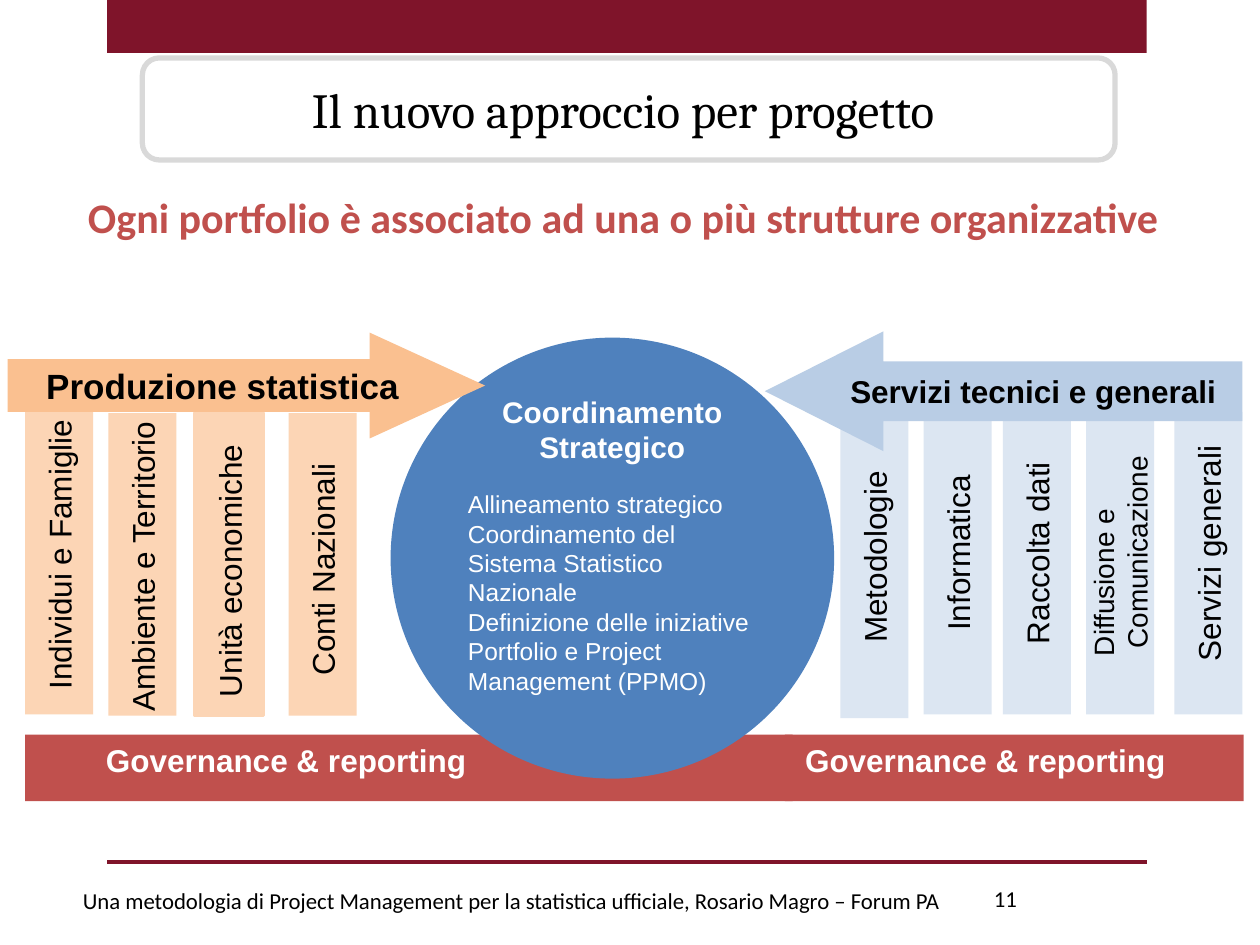
"""Build the slide on the project-based approach and its organisational portfolios."""
from lxml import etree
from pptx import Presentation
from pptx.dml.color import RGBColor
from pptx.enum.shapes import MSO_CONNECTOR, MSO_SHAPE
from pptx.enum.text import MSO_ANCHOR, PP_ALIGN
from pptx.oxml.ns import qn
from pptx.util import Inches, Pt

RECT, ROUND, OVAL = MSO_SHAPE.RECTANGLE, MSO_SHAPE.ROUNDED_RECTANGLE, MSO_SHAPE.OVAL
RIGHT, LEFT = MSO_SHAPE.RIGHT_ARROW, MSO_SHAPE.LEFT_ARROW
STRAIGHT = MSO_CONNECTOR.STRAIGHT
TOP, MIDDLE = MSO_ANCHOR.TOP, MSO_ANCHOR.MIDDLE
START, CENTER = PP_ALIGN.LEFT, PP_ALIGN.CENTER

WINE, RED, BLUE = "7F142A", "C0504D", "4F81BD"
PEACH, PALE, BLACK, WHITE = "FCD5B5", "DCE6F2", "000000", "FFFFFF"

deck = Presentation()
deck.slide_width, deck.slide_height = Inches(10), Inches(7.5)
slide = deck.slides.add_slide(deck.slide_layouts[6])


def block(kind, box, fill, line=None, width=2):
    """Add a preset shape, or a text box when kind is None."""
    spot = [Inches(v) for v in box]
    if kind is None:
        return slide.shapes.add_textbox(*spot)
    shape = slide.shapes.add_shape(kind, *spot)
    shape.shadow.inherit = False
    shape.fill.solid()
    shape.fill.fore_color.rgb = RGBColor.from_string(fill)
    if line:
        shape.line.color.rgb = RGBColor.from_string(line)
        shape.line.width = Pt(width)
    else:
        shape.line.fill.background()
    return shape


def write(shape, lines, size, color=BLACK, bold=False, face="Arial",
          align=START, anchor=TOP, wrap=True):
    """Fill a shape with paragraphs in one style."""
    frame = shape.text_frame
    frame.word_wrap, frame.vertical_anchor = wrap, anchor
    frame.text = "\n".join(lines)
    for para in frame.paragraphs:
        para.alignment = align
        font = para.font
        font.size, font.bold, font.name = Pt(size), bold, face
        font.color.rgb = RGBColor.from_string(color)
    return frame


block(RECT, (0.85, 0, 8.25, 0.42), WINE)
rule = slide.shapes.add_connector(
    STRAIGHT, Inches(0.85), Inches(6.84), Inches(9.1), Inches(6.84))
rule.line.color.rgb = RGBColor.from_string(WINE)
rule.line.width = Pt(2)
etree.SubElement(rule._element.spPr, qn("a:effectLst"))

title = block(ROUND, (1.13, 0.46, 7.72, 0.81), WHITE, "D9D9D9", 3)
frame = write(title, ["Il nuovo approccio per progetto"], 28, face="Cambria",
              align=CENTER, anchor=MIDDLE)
frame.margin_right = Inches(0.19)
write(block(None, (0.6, 1.47, 8.93, 0.5), None),
      ["Ogni portfolio è associato ad una o più strutture organizzative"],
      24, RED, True, "Calibri")

for left, width, inset in [(0.2, 6.09, 0.64), (6.23, 3.64, 0.16)]:
    bar = block(RECT, (left, 5.83, width, 0.53), RED)
    frame = write(bar, ["Governance & reporting"], 18, WHITE, True)
    frame.margin_left = Inches(inset)

columns = [
    (0.2, 3.19, 2.48, PEACH, None, ["Individui e Famiglie"], 4.39, 2.36),
    (0.86, 3.28, 2.4, PEACH, None, ["Ambiente e Territorio"], 4.48, 2.53),
    (1.55, 3.28, 2.4, PEACH, PEACH, ["Unità economiche"], 4.52, 2.22),
    (2.29, 3.28, 2.4, PEACH, None, ["Conti Nazionali"], 4.51, 1.9),
    (6.67, 3.3, 2.4, PALE, None, ["Metodologie"], 4.41, 1.58),
    (7.33, 3.27, 2.4, PALE, None, ["Informatica"], 4.38, 1.45),
    (7.96, 3.27, 2.4, PALE, None, ["Raccolta dati"], 4.38, 1.66),
    (8.62, 3.27, 2.4, PALE, None, ["Diffusione e", "Comunicazione"], 4.4, 1.81),
    (9.32, 3.27, 2.4, PALE, None, ["Servizi generali"], 4.38, 1.93),
]
for left, top, tall, fill, line, lines, mid, span in columns:
    block(RECT, (left, top, 0.54, tall), fill, line)
    pair = len(lines) == 2
    deep = 0.64 if pair else 0.4
    label = block(None, (left + 0.27 - span / 2, mid - deep / 2, span, deep), None)
    label.rotation = 270
    frame = write(label, lines, 16 if pair else 18, wrap=False)
    if pair:
        frame.paragraphs[1]._p.get_or_add_pPr().set("marL", str(Inches(0.06)))

hub = block(OVAL, (3.1, 2.68, 3.52, 3.5), BLUE)
frame = write(hub, ["Coordinamento Strategico", "Allineamento strategico",
                    "Coordinamento del Sistema Statistico Nazionale",
                    "Definizione delle iniziative",
                    "Portfolio e Project Management (PPMO)"],
              14, WHITE, anchor=MIDDLE)
frame.margin_bottom = Inches(0.27)
head, first = frame.paragraphs[:2]
head.alignment = CENTER
head.font.size, head.font.bold = Pt(17), True
first.space_before = Pt(14)

arrows = [
    (RIGHT, (0.06, 2.64, 3.79, 0.84), 1.09, "FAC090", "Produzione statistica", 20, 0.18),
    (LEFT, (6.07, 2.63, 3.79, 0.95), 0.99, "B9CDE5", "Servizi tecnici e generali", 18, 0.1),
]
for kind, box, point, fill, text, size, inset in arrows:
    arrow = block(kind, box, fill)
    arrow.adjustments[1] = point
    frame = write(arrow, [text], size, bold=True, align=CENTER, anchor=MIDDLE)
    frame.margin_left = Inches(inset)

footer = "Una metodologia di Project Management per la statistica ufficiale, Rosario Magro – Forum PA"
for box, text in [((0.56, 6.99, 7.1, 0.4), footer), ((7.79, 6.97, 1.91, 0.4), "11")]:
    write(block(None, box, None), [text], 13, face="Calibri")

deck.save("out.pptx")
